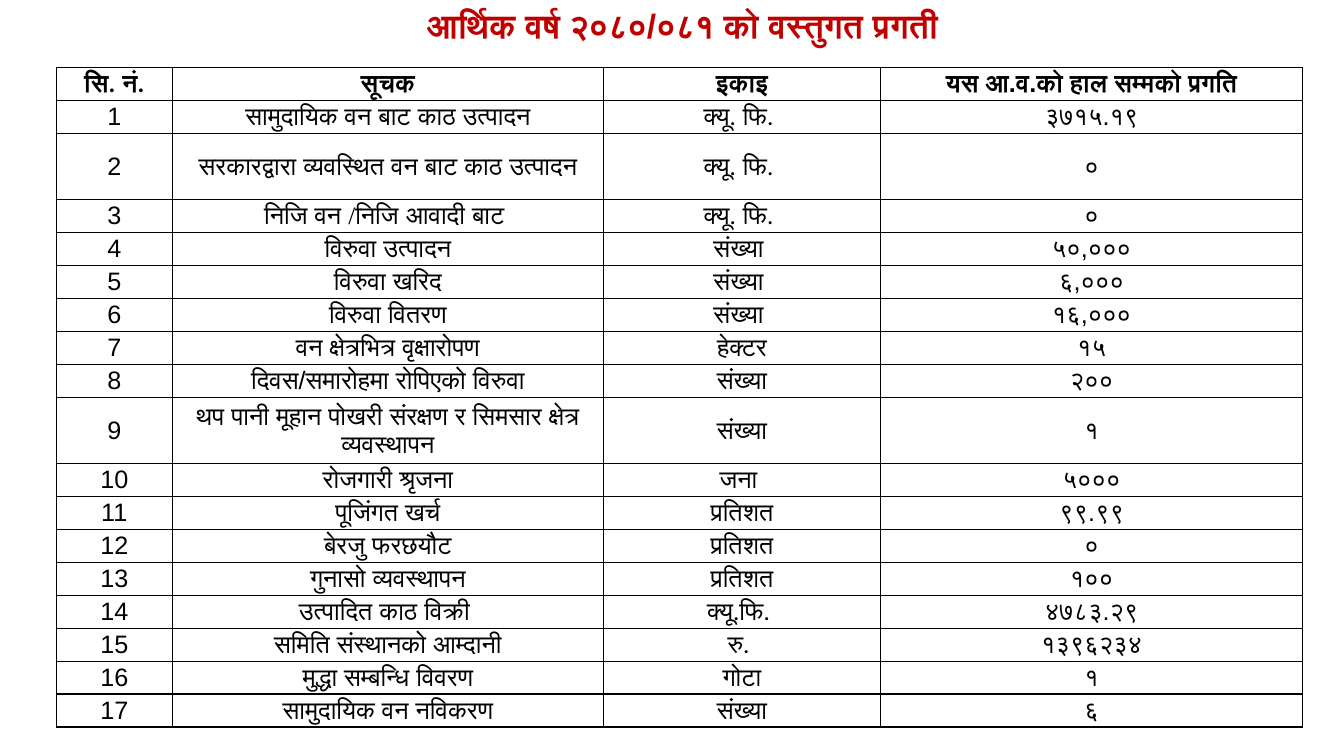
from itertools import groupby
from lxml.etree import SubElement
from pptx import Presentation
from pptx.dml.color import RGBColor as RGB
from pptx.enum.text import MSO_ANCHOR as Anchor, PP_ALIGN as Align
from pptx.oxml.ns import qn
from pptx.util import Cm, Pt

COLORS = {"ink": "000000", "title": "C00000", "paper": "FFFFFF"}
DOT = {".": "Calibri"}
SLASH = {"/": "Times New Roman"}


def write(frame, text, size=18, color="ink", bold=False, marks={}, spacing=1.0):
    """Write one centred paragraph; marks gives the font of single signs."""
    para = frame.paragraphs[0]
    para.alignment = Align.CENTER
    para.line_spacing = spacing
    for face, signs in groupby(text, lambda sign: marks.get(sign, "Arial")):
        run = para.add_run()
        run.text = "".join(signs)
        font = run.font
        font.name, font.size, font.bold = face, Pt(size), bold
        font.color.rgb = RGB.from_string(COLORS[color])
        SubElement(font._element, qn("a:cs"), typeface=face)


def rule(cell):
    """Draw a thin line on all four sides of a cell."""
    props = cell._tc.get_or_add_tcPr()
    for spot, side in enumerate(("lnL", "lnR", "lnT", "lnB")):
        line = SubElement(props, qn(f"a:{side}"), w=str(Pt(1)))
        fill = SubElement(line, qn("a:solidFill"))
        SubElement(fill, qn("a:srgbClr"), val=COLORS["ink"])
        props.remove(line)
        props.insert(spot, line)


deck = Presentation()
deck.slide_width, deck.slide_height = Cm(33.87), Cm(19.05)
slide = deck.slides.add_slide(deck.slide_layouts[5])

# Title
title = slide.shapes.title
title.left, title.top, title.width, title.height = Cm(1.4), Cm(0), Cm(31.6), Cm(2.31)
title.text_frame.vertical_anchor = Anchor.TOP
write(title.text_frame, "आर्थिक वर्ष २०८०/०८१ को वस्तुगत प्रगती",
      size=24, color="title", bold=True)

# Table content: indicator, unit, progress
head = ("सि. नं.", "सूचक", "इकाइ", "यस आ.व.को हाल सम्मको प्रगति")
items = [
    ("सामुदायिक वन बाट काठ उत्पादन", "क्यू. फि. ", "३७१५.१९"),
    ("सरकारद्वारा व्यवस्थित वन बाट काठ उत्पादन", "क्यू. फि. ", "०"),
    ("निजि वन /निजि आवादी बाट ", "क्यू. फि. ", "०"),
    ("विरुवा उत्पादन", "संख्या ", "५०,०००"),
    ("विरुवा खरिद", "संख्या ", "६,०००"),
    ("विरुवा वितरण", "संख्या ", "१६,०००"),
    ("वन क्षेत्रभित्र वृक्षारोपण", "हेक्टर", "१५"),
    ("दिवस/समारोहमा रोपिएको विरुवा", "संख्या", "२००"),
    ("थप पानी मूहान पोखरी संरक्षण र सिमसार क्षेत्र व्यवस्थापन", "संख्या", "१"),
    ("रोजगारी श्रृजना", "जना ", "५०००"),
    ("पूजिंगत खर्च", "प्रतिशत", "९९.९९"),
    ("बेरजु फरछयौट", "प्रतिशत", "०"),
    ("गुनासो व्यवस्थापन", "प्रतिशत", "१००"),
    ("उत्पादित काठ विक्री ", "क्यू.फि. ", "४७८३.२९"),
    ("समिति संस्थानको आम्दानी", "रु. ", "१३९६२३४"),
    ("मुद्धा सम्बन्धि विवरण", "गोटा", "१"),
    ("सामुदायिक वन नविकरण", "संख्या", "६"),
]
rows = [head] + [(str(num), *item) for num, item in enumerate(items, 1)]

# Table grid: rows 2 and 9 are twice as tall
widths = (2.92, 10.87, 6.98, 10.64)
table = slide.shapes.add_table(
    len(rows), len(widths), Cm(1.42), Cm(1.7), Cm(sum(widths)), Cm(16.66)).table
table.first_row = table.horz_banding = False
for col, width in zip(table.columns, widths):
    col.width = Cm(width)

# Table cells
for num, texts in enumerate(rows):
    table.rows[num].height = Cm(1.67 if num in (2, 9) else 0.83)
    for col, text in enumerate(texts):
        cell = table.cell(num, col)
        cell.margin_left = cell.margin_right = cell.margin_top = cell.margin_bottom = 0
        cell.vertical_anchor = Anchor.MIDDLE
        cell.fill.solid()
        cell.fill.fore_color.rgb = RGB.from_string(COLORS["paper"])
        rule(cell)
        marks = DOT if col in (0, 2) else SLASH if num == 3 else {}
        write(cell.text_frame, text, bold=num == 0, marks=marks)

deck.save("out.pptx")
